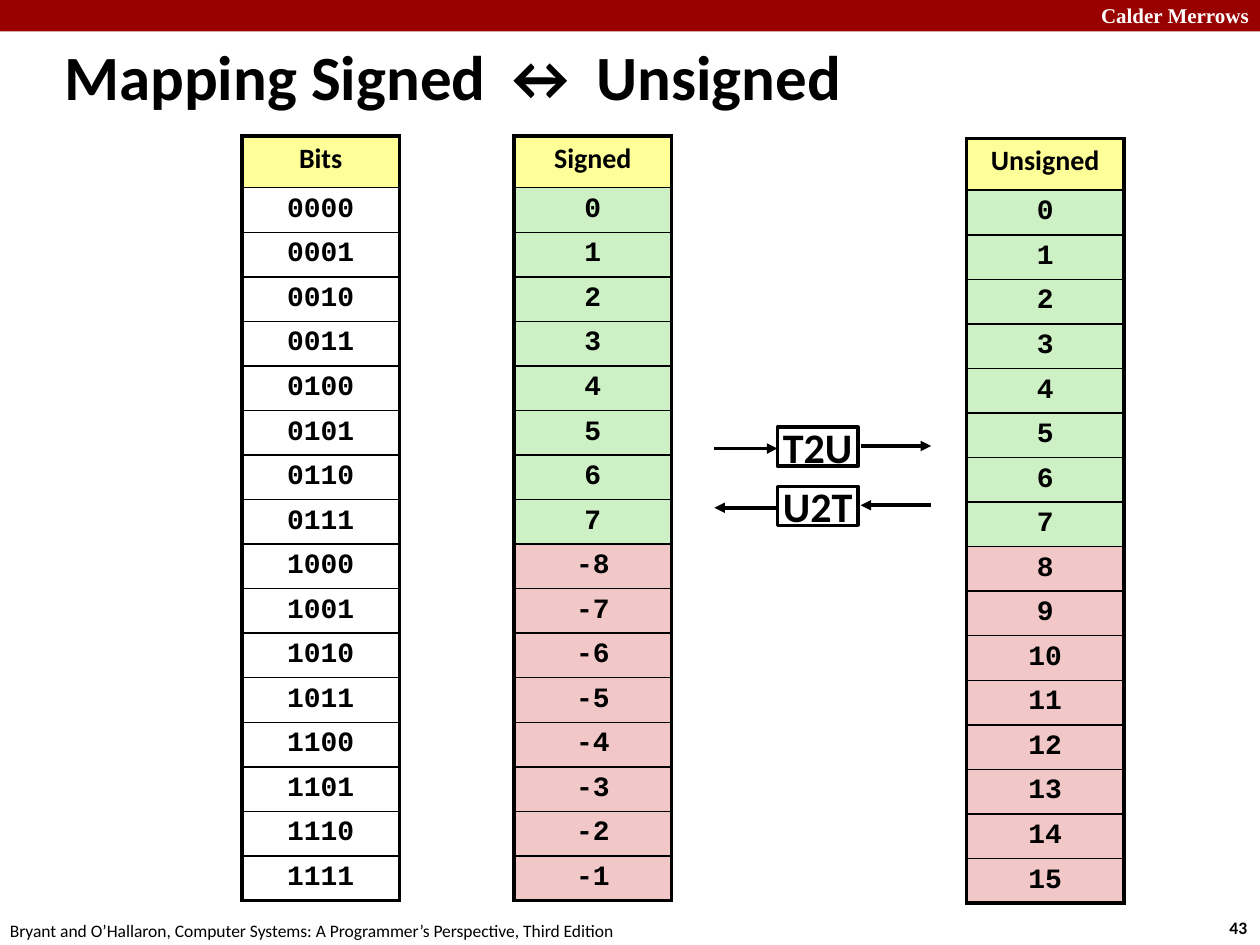
from pptx import Presentation
from pptx.dml.color import RGBColor
from pptx.enum.shapes import MSO_CONNECTOR, MSO_SHAPE
from pptx.enum.text import MSO_ANCHOR, PP_ALIGN
from pptx.oxml.ns import qn
from pptx.util import Inches, Pt
from lxml.etree import SubElement

# Content
TITLE = "Mapping Signed ↔ Unsigned"
SCHOOL = "Calder Merrows"
BOOK = ("Bryant and O’Hallaron, Computer Systems: "
        "A Programmer’s Perspective, Third Edition")
PAGE = "43"
HEX = {"band": "990000", "head": "FFFF99", "low": "CDF1C5",
       "high": "F1C7C7", "white": "FFFFFF", "black": "000000"}
BITS = [f"{n:04b}" for n in range(16)]
SIGNED = [str(n) for n in [*range(8), *range(-8, 0)]]
PLAIN = [str(n) for n in range(16)]
# Heading, values, left, top, fill of each half
LISTS = [("Bits", BITS, 1.92, 1.08, ("white", "white")),
         ("Signed", SIGNED, 4.08, 1.08, ("low", "high")),
         ("Unsigned", PLAIN, 7.67, 1.1, ("low", "high"))]
# Label, top, whether arrows point right
MAPS = [("T2U", 3.39, True), ("U2T", 3.86, False)]

# Grid
WIDE, HIGH = 10, 7.5
COL, HEAD, BODY = 1.25, 0.41, 5.66
BOX_X, BOX_W, BOX_H = 6.17, 0.64, 0.31
SPANS = [(5.67, 6.17, 0.17), (6.83, 7.39, 0.15)]  # left, right, drop
THICK, THIN = 2.25, 1


def color(name):
    return RGBColor.from_string(HEX[name])


def write(frame, text, size=16, font="Calibri", ink="black", bold=True,
          align=PP_ALIGN.LEFT, wrap=True, pad=(0.1, 0.05), space=None):
    frame.word_wrap = wrap
    frame.margin_left = frame.margin_right = Inches(pad[0])
    frame.margin_top = frame.margin_bottom = Inches(pad[1])
    para = frame.paragraphs[0]
    para.alignment = align
    para.line_spacing = space
    run = para.add_run()
    run.text = text
    run.font.size, run.font.name, run.font.bold = Pt(size), font, bold
    run.font.color.rgb = color(ink)


def label(slide, text, spot, **form):
    box = slide.shapes.add_textbox(*map(Inches, spot))
    write(box.text_frame, text, **form)


def block(slide, spot, fill, line=None):
    shape = slide.shapes.add_shape(MSO_SHAPE.RECTANGLE, *map(Inches, spot))
    shape.shadow.inherit = False
    shape.fill.solid()
    shape.fill.fore_color.rgb = color(fill)
    if line:
        shape.line.color.rgb, shape.line.width = color("black"), Pt(line)
    else:
        shape.line.fill.background()
    return shape


def arrow(slide, start, end, y):
    line = slide.shapes.add_connector(
        MSO_CONNECTOR.STRAIGHT, *map(Inches, (start, y, end, y)))
    line.line.color.rgb, line.line.width = color("black"), Pt(2)
    SubElement(line.line._get_or_add_ln(), qn("a:tailEnd"), type="triangle")
    SubElement(line._element.spPr, qn("a:effectLst"))


def border(cell, first, last):
    props = cell._tc.get_or_add_tcPr()
    sides = {"L": THICK, "R": THICK, "T": THICK if first else THIN,
             "B": THICK if last else THIN}
    for side, width in sides.items():
        edge = SubElement(props, qn(f"a:ln{side}"), w=str(Pt(width)))
        fill = SubElement(edge, qn("a:solidFill"))
        SubElement(fill, qn("a:srgbClr"), val=HEX["black"])


def column(slide, head, values, left, top, fills):
    count = len(values)
    table = slide.shapes.add_table(
        count + 1, 1, *map(Inches, (left, top, COL, HEAD + BODY))).table
    table.first_row = table.horz_banding = False
    for i, text in enumerate([head, *values]):
        table.rows[i].height = Inches(BODY / count if i else HEAD)
        cell = table.cell(i, 0)
        cell.margin_left = cell.margin_right = Inches(0.05)
        border(cell, i == 0, i == count)
        cell.fill.solid()
        fill = fills[i > count // 2] if i else "head"
        cell.fill.fore_color.rgb = color(fill)
        write(cell.text_frame, text, font="Courier New" if i else "Calibri",
              align=PP_ALIGN.CENTER, pad=(0.05, 0.05), space=0.95)
        cell.margin_left = cell.margin_right = Inches(0.05)
        cell.margin_top = cell.margin_bottom = Inches(0.05)


def main():
    deck = Presentation()
    deck.slide_width, deck.slide_height = Inches(WIDE), Inches(HIGH)
    slide = deck.slides.add_slide(deck.slide_layouts[6])

    # Band, footer and title
    block(slide, (0, 0, WIDE, 0.25), "band")
    label(slide, SCHOOL, (8.64, -0.03, 1.43, 0.3), size=12,
          font="Times New Roman", ink="white")
    label(slide, PAGE, (9.66, 7.23, 0.37, 0.27), size=10)
    label(slide, BOOK, (-0.02, 7.25, 5.08, 0.27), size=10, bold=False)
    label(slide, TITLE, (0.44, 0.27, 7.46, 0.61), size=36, pad=(0.07, 0.03))

    # Number columns
    for item in LISTS:
        column(slide, *item)

    # Mapping boxes with their arrows
    for text, top, right in MAPS:
        box = block(slide, (BOX_X, top, BOX_W, BOX_H), "white", line=2)
        box.text_frame.vertical_anchor = MSO_ANCHOR.MIDDLE
        write(box.text_frame, text, size=24, align=PP_ALIGN.CENTER, wrap=False)
        for near, far, drop in SPANS:
            ends = (near, far) if right else (far, near)
            arrow(slide, *ends, top + drop)

    deck.save("out.pptx")


if __name__ == "__main__":
    main()
